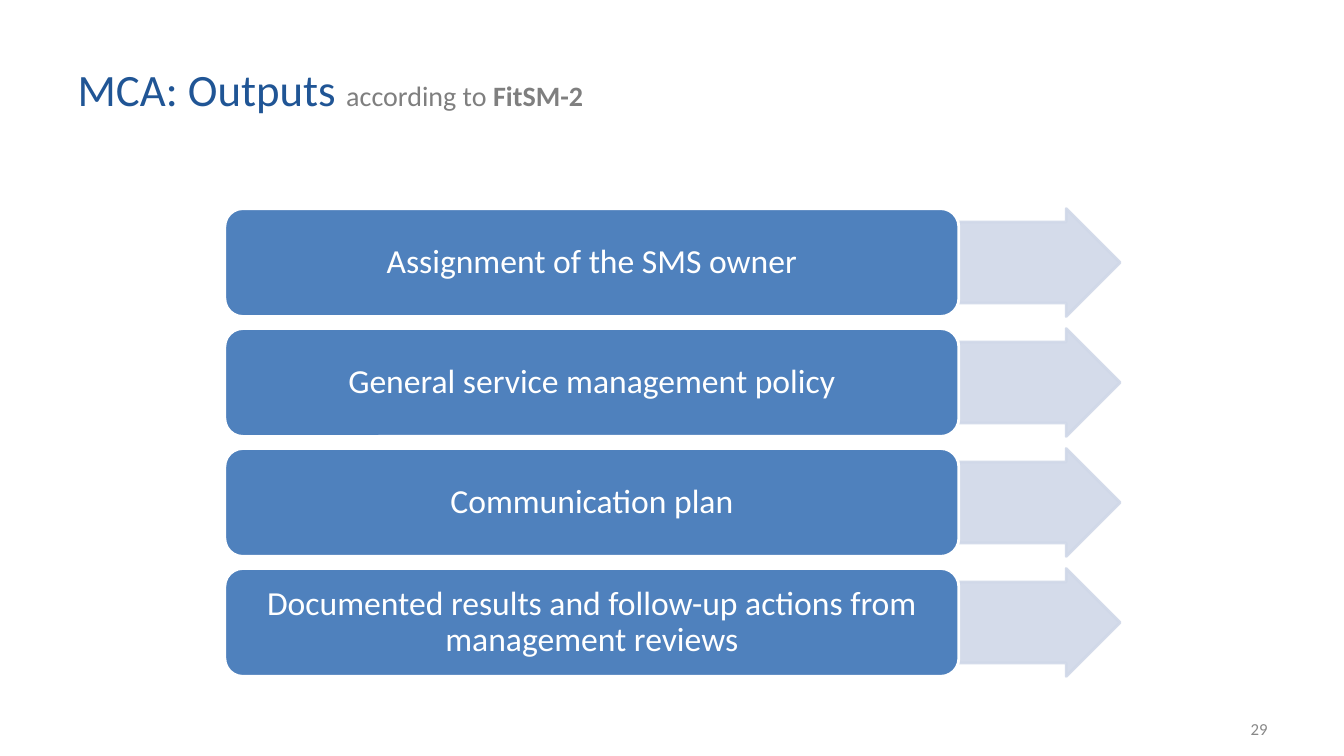
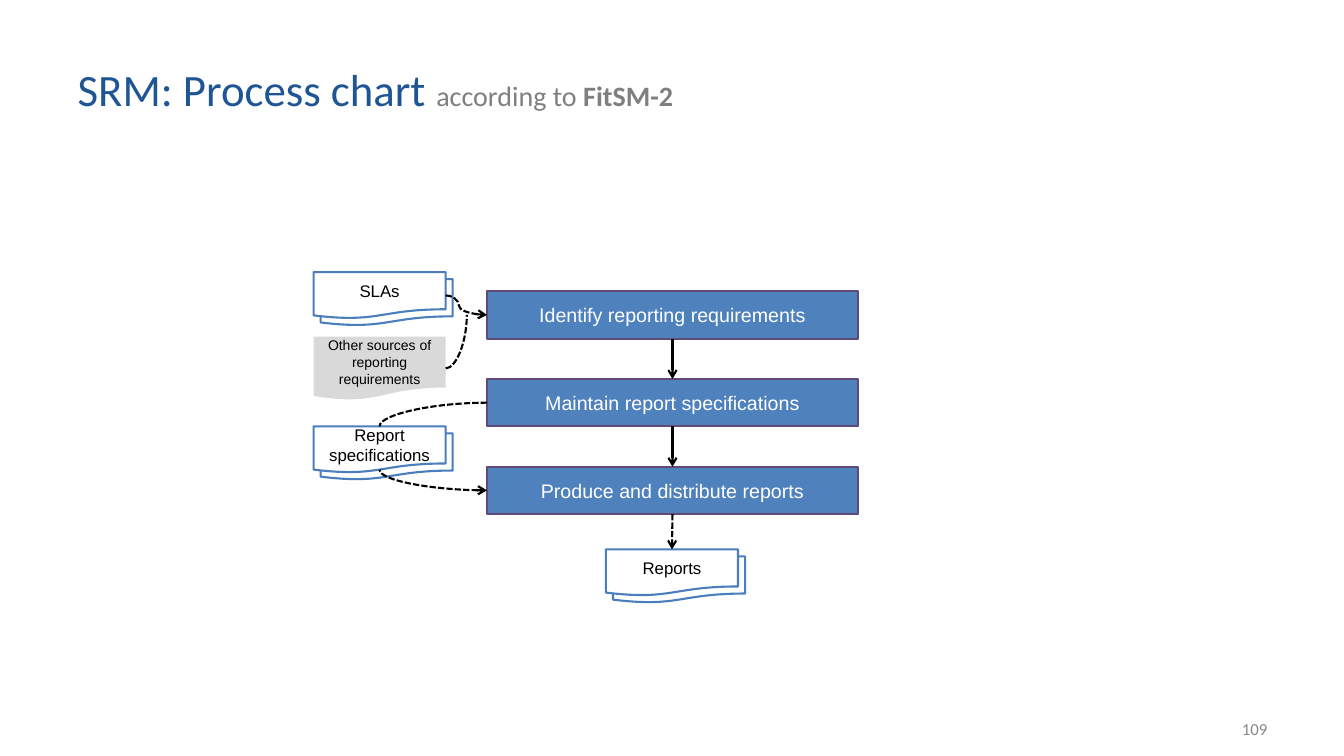
from lxml import etree
from pptx import Presentation
from pptx.dml.color import RGBColor
from pptx.enum.dml import MSO_LINE
from pptx.enum.shapes import MSO_CONNECTOR, MSO_SHAPE
from pptx.enum.text import MSO_ANCHOR, PP_ALIGN
from pptx.oxml.ns import qn
from pptx.util import Inches, Pt

TITLE_BLUE = RGBColor(0x20, 0x55, 0x95)
SUBTITLE_GREY = RGBColor(0x7F, 0x7F, 0x7F)
NUMBER_GREY = RGBColor(0x88, 0x88, 0x88)
BOX_BLUE = RGBColor(0x4F, 0x81, 0xBD)
ARROW_BLUE = RGBColor(0xD0, 0xD8, 0xE8)
DOCUMENT_BLUE = RGBColor(0x4B, 0x7E, 0xBC)
STEP_EDGE = RGBColor(0x5F, 0x4A, 0x78)
SOURCE_GREY = RGBColor(0xD9, 0xD9, 0xD9)
WHITE = RGBColor(0xFF, 0xFF, 0xFF)
BLACK = RGBColor(0, 0, 0)

OUTPUTS = [
    "Assignment of the SMS owner",
    "General service management policy",
    "Communication plan",
    "Documented results and follow-up actions from management reviews",
]
STEPS = [
    "Identify reporting requirements",
    "Maintain report specifications",
    "Produce and distribute reports",
]

OUTPUT_LEFT, OUTPUT_TOP, OUTPUT_PITCH = 2.23, 2.07, 1.19
OUTPUT_WIDTH, OUTPUT_HEIGHT, ARROW_WIDTH = 7.28, 1.07, 1.6
STEP_LEFT, STEP_TOP, STEP_PITCH = 4.83, 2.89, 0.87
STEP_WIDTH, STEP_HEIGHT = 3.68, 0.47
DOCUMENT_LEFT, DOCUMENT_WIDTH, DOCUMENT_HEIGHT = 3.11, 1.31, 0.46
STACK_OFFSET = 0.07


def style_font(font, size, color, name="Calibri"):
    font.name, font.size, font.color.rgb = name, Pt(size), color


def add_block(slide, kind, box, fill, edge=None, edge_width=1.5):
    block = slide.shapes.add_shape(kind, *map(Inches, box))
    block.shadow.inherit = False
    block.fill.solid()
    block.fill.fore_color.rgb = fill
    if edge is None:
        block.line.fill.background()
    else:
        block.line.color.rgb = edge
        block.line.width = Pt(edge_width)
    return block


def write_centred(block, text, size, color, font_name):
    frame = block.text_frame
    frame.word_wrap = True
    frame.vertical_anchor = MSO_ANCHOR.MIDDLE
    paragraph = frame.paragraphs[0]
    paragraph.text = text
    paragraph.alignment = PP_ALIGN.CENTER
    style_font(paragraph.font, size, color, font_name)
    return paragraph


def add_titled_slide(deck, topic, number):
    slide = deck.slides.add_slide(deck.slide_layouts[5])
    title = slide.shapes.title.text_frame.paragraphs[0]
    title.alignment = PP_ALIGN.LEFT
    for text, size, color, bold in (
        (topic + " ", 32, TITLE_BLUE, False),
        ("according to ", 20, SUBTITLE_GREY, False),
        ("FitSM-2", 20, SUBTITLE_GREY, True),
    ):
        run = title.add_run()
        run.text = text
        style_font(run.font, size, color)
        run.font.bold = bold

    footer = slide.shapes.add_textbox(*map(Inches, (9.56, 7.03, 3.11, 0.4)))
    footer.text_frame.word_wrap = True
    footer.text_frame.vertical_anchor = MSO_ANCHOR.MIDDLE
    page = footer.text_frame.paragraphs[0]
    page.text = str(number)
    page.alignment = PP_ALIGN.RIGHT
    style_font(page.font, 12, NUMBER_GREY)
    return slide


def make_translucent(block):
    """Let the fill and the outline show at 90 % opacity."""
    for color in block._element.spPr.iter(qn("a:srgbClr")):
        etree.SubElement(color, qn("a:alpha"), val="90000")


def add_link(slide, start=(0, 0), end=(0, 0), kind=MSO_CONNECTOR.STRAIGHT,
             dashed=False, arrow_at="tailEnd"):
    """Black connector; arrow_at is 'headEnd', 'tailEnd' or None."""
    link = slide.shapes.add_connector(kind, *map(Inches, start + end))
    link.line.color.rgb = BLACK
    link.line.width = Pt(1.5)
    if dashed:
        link.line.dash_style = MSO_LINE.SQUARE_DOT
        link.line._ln.find(qn("a:prstDash")).set("val", "sysDash")
    if arrow_at:
        etree.SubElement(link.line._ln, qn("a:" + arrow_at), type="arrow")
    etree.SubElement(link._element.spPr, qn("a:effectLst"))
    return link


def join_down(slide, upper, lower, dashed=False):
    link = add_link(slide, dashed=dashed)
    link.begin_connect(upper, 2)
    link.end_connect(lower, 0)


def add_quarter_curve(slide, start, end, arrow_at=None):
    """Dashed curve that leaves start level and meets end upright."""
    curve = add_link(slide, start, end, MSO_CONNECTOR.CURVE, True, arrow_at)
    curve._element.spPr.find(qn("a:prstGeom")).set("prst", "curvedConnector2")


def add_document_stack(slide, left, top, text):
    for offset in (STACK_OFFSET, 0):
        document = add_block(
            slide, MSO_SHAPE.FLOWCHART_DOCUMENT,
            (left + offset, top + offset, DOCUMENT_WIDTH, DOCUMENT_HEIGHT),
            WHITE, DOCUMENT_BLUE)
    write_centred(document, text, 12, BLACK, "Arial")
    return document


def build_outputs(deck):
    slide = add_titled_slide(deck, "MCA: Outputs", 29)
    for row, output in enumerate(OUTPUTS):
        top = OUTPUT_TOP + row * OUTPUT_PITCH
        arrow = add_block(
            slide, MSO_SHAPE.RIGHT_ARROW,
            (OUTPUT_LEFT + OUTPUT_WIDTH, top, ARROW_WIDTH, OUTPUT_HEIGHT),
            ARROW_BLUE, ARROW_BLUE, 2)
        arrow.adjustments[0] = 0.75
        make_translucent(arrow)
        box = add_block(
            slide, MSO_SHAPE.ROUNDED_RECTANGLE,
            (OUTPUT_LEFT, top, OUTPUT_WIDTH, OUTPUT_HEIGHT), BOX_BLUE, WHITE, 2)
        write_centred(box, output, 24, WHITE, "Calibri").line_spacing = 0.9


def build_process_chart(deck):
    slide = add_titled_slide(deck, "SRM: Process chart", 109)

    steps, middles = [], []
    for row, text in enumerate(STEPS):
        top = STEP_TOP + row * STEP_PITCH
        step = add_block(slide, MSO_SHAPE.RECTANGLE,
                         (STEP_LEFT, top, STEP_WIDTH, STEP_HEIGHT),
                         BOX_BLUE, STEP_EDGE)
        write_centred(step, text, 14, WHITE, "Arial")
        steps.append(step)
        middles.append(top + STEP_HEIGHT / 2)
    identify, maintain, produce = middles

    sla_top, source_top, source_height, specification_top = 2.7, 3.34, 0.63, 4.23
    add_document_stack(slide, DOCUMENT_LEFT, sla_top, "SLAs")
    add_document_stack(slide, DOCUMENT_LEFT, specification_top, "Report specifications")
    reports = add_document_stack(slide, 6.01, 5.45, "Reports")
    other_sources = add_block(
        slide, MSO_SHAPE.FLOWCHART_DOCUMENT,
        (DOCUMENT_LEFT, source_top, DOCUMENT_WIDTH, source_height), SOURCE_GREY)
    write_centred(other_sources, "Other sources of reporting requirements",
                  10, BLACK, "Arial")

    for upper, lower in zip(steps, steps[1:]):
        join_down(slide, upper, lower)
    join_down(slide, steps[-1], reports, dashed=True)

    right = DOCUMENT_LEFT + DOCUMENT_WIDTH
    centre = DOCUMENT_LEFT + DOCUMENT_WIDTH / 2
    sla_curve = add_link(slide, (right, sla_top + DOCUMENT_HEIGHT / 2),
                         (STEP_LEFT, identify), MSO_CONNECTOR.CURVE, dashed=True)
    bend = sla_curve._element.spPr.find(qn("a:prstGeom")).get_or_add_avLst()
    etree.SubElement(bend, qn("a:gd"), name="adj1", fmla="val 31800")
    add_quarter_curve(slide, (right, source_top + source_height / 2), (4.63, identify))
    add_quarter_curve(slide, (STEP_LEFT, maintain), (centre, specification_top))
    add_quarter_curve(slide, (STEP_LEFT, produce), (centre, 4.66), "headEnd")


def main():
    deck = Presentation()
    deck.slide_width, deck.slide_height = Inches(13.33), Inches(7.5)
    title = deck.slide_layouts[5].placeholders[0]
    title.left, title.top, title.width, title.height = map(
        Inches, (0.67, 0.3, 9.91, 1.15))
    title.text_frame.vertical_anchor = MSO_ANCHOR.MIDDLE
    build_outputs(deck)
    build_process_chart(deck)
    deck.save("out.pptx")


if __name__ == "__main__":
    main()
